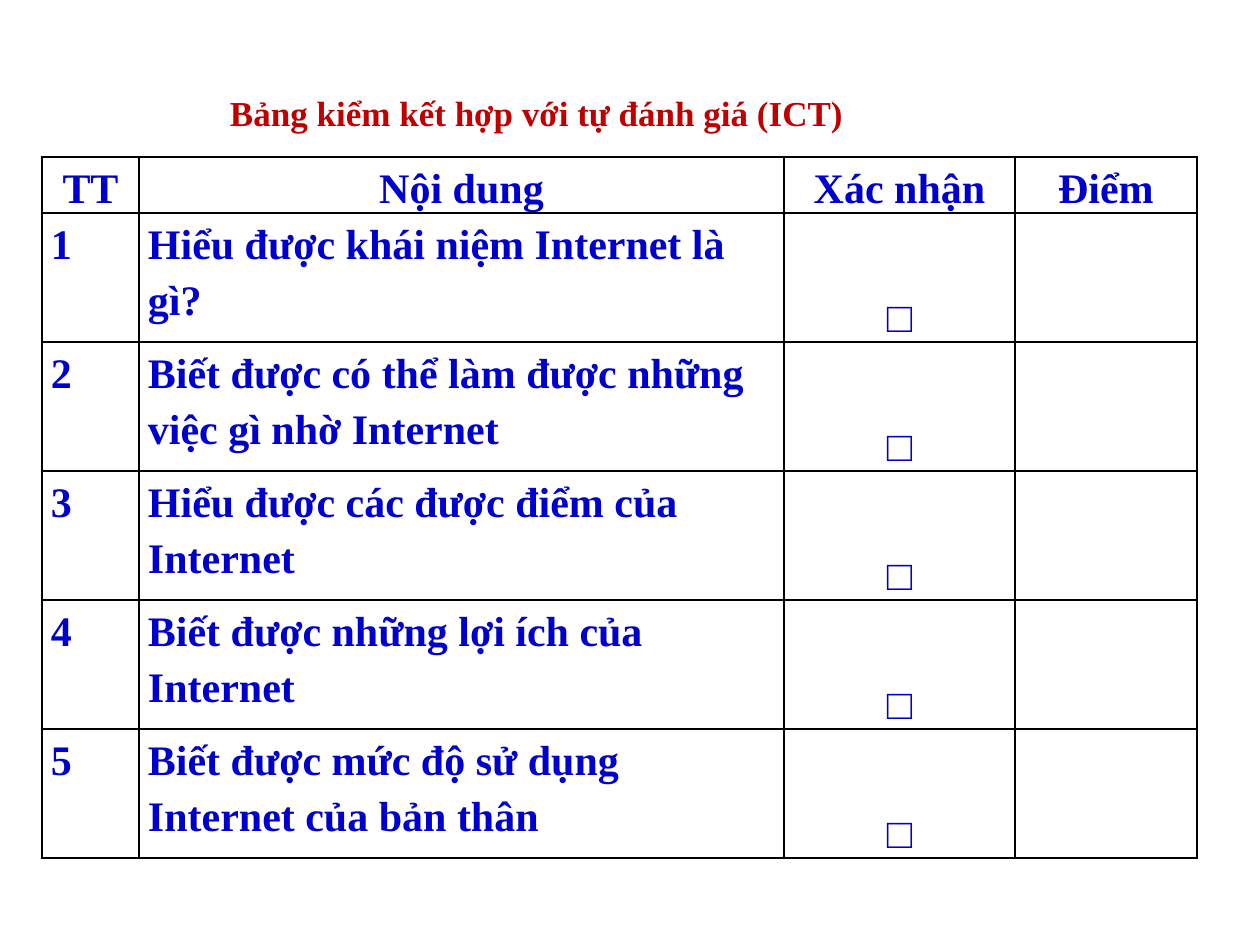
"""Build the Internet self-assessment checklist slide."""
from lxml import etree
from pptx import Presentation
from pptx import util as u
from pptx.dml.color import RGBColor
from pptx.enum import text
from pptx.oxml import ns

PX = 914400 / 126
BLUE = RGBColor(0x00, 0x00, 0xCC)
RED = RGBColor(0xC0, 0x00, 0x00)
BLACK = RGBColor(0x00, 0x00, 0x00)
LEFT = text.PP_ALIGN.LEFT
CENTER = text.PP_ALIGN.CENTER
TOP = text.MSO_ANCHOR.TOP
MIDDLE = text.MSO_ANCHOR.MIDDLE
BOTTOM = text.MSO_ANCHOR.BOTTOM


def px(length):
    return u.Emu(round(length * PX))


def write(frame, words, size=24, color=BLUE, align=LEFT, spacing=1.2, after=10):
    paragraph = frame.paragraphs[0]
    paragraph.alignment = align
    paragraph.line_spacing = spacing
    paragraph.space_before = u.Pt(0)
    paragraph.space_after = u.Pt(after)
    run = paragraph.add_run()
    run.text = words
    run.font.name = "Times New Roman"
    run.font.size = u.Pt(size)
    run.font.bold = True
    run.font.color.rgb = color


prs = Presentation()
prs.slide_width, prs.slide_height = px(1260), px(945)
slide = prs.slides.add_slide(prs.slide_layouts[5])

heading = slide.shapes.title
heading.left, heading.top, heading.width, heading.height = px(210), px(85), px(653), px(55)
heading_frame = heading.text_frame
heading_frame.word_wrap = True
heading_frame.auto_size = text.MSO_AUTO_SIZE.NONE
heading_frame.vertical_anchor = TOP
heading_frame.margin_left, heading_frame.margin_right = px(20), px(0)
write(heading_frame, "Bảng kiểm kết hợp với tự đánh giá (ICT)",
      size=20, color=RED, spacing=1.0, after=0)

headers = ["TT", "Nội dung", "Xác nhận", "Điểm"]
criteria = [
    "Hiểu được khái niệm Internet là gì?",
    "Biết được có thể làm được những việc gì nhờ Internet",
    "Hiểu được các được điểm của Internet",
    "Biết được những lợi ích của Internet",
    "Biết được mức độ sử dụng Internet của bản thân",
]
rows = [headers] + [[str(n), item, "□", ""] for n, item in enumerate(criteria, 1)]
column_widths = [97, 645, 231, 182]
row_heights = [56] + [129] * len(criteria)

checklist = slide.shapes.add_table(
    len(rows), len(headers), px(42), px(157),
    px(sum(column_widths)), px(sum(row_heights))).table
checklist.first_row = checklist.horz_banding = False
for column, width in zip(checklist.columns, column_widths):
    column.width = px(width)
for row, height in zip(checklist.rows, row_heights):
    row.height = px(height)

for r, row in enumerate(rows):
    for c, words in enumerate(row):
        cell = checklist.cell(r, c)
        cell.fill.background()
        cell.margin_left = cell.margin_right = px(9)
        cell.margin_top = cell.margin_bottom = 0
        cell.vertical_anchor = MIDDLE if r == 0 else BOTTOM if c == 2 else TOP
        if words:
            write(cell.text_frame, words, align=CENTER if r == 0 or c == 2 else LEFT)
        properties = cell._tc.get_or_add_tcPr()
        for i, side in enumerate(["a:lnL", "a:lnR", "a:lnT", "a:lnB"]):
            border = etree.Element(ns.qn(side), w=str(u.Pt(1)))
            fill = etree.SubElement(border, ns.qn("a:solidFill"))
            etree.SubElement(fill, ns.qn("a:srgbClr"), val=str(BLACK))
            properties.insert(i, border)

prs.save("out.pptx")
